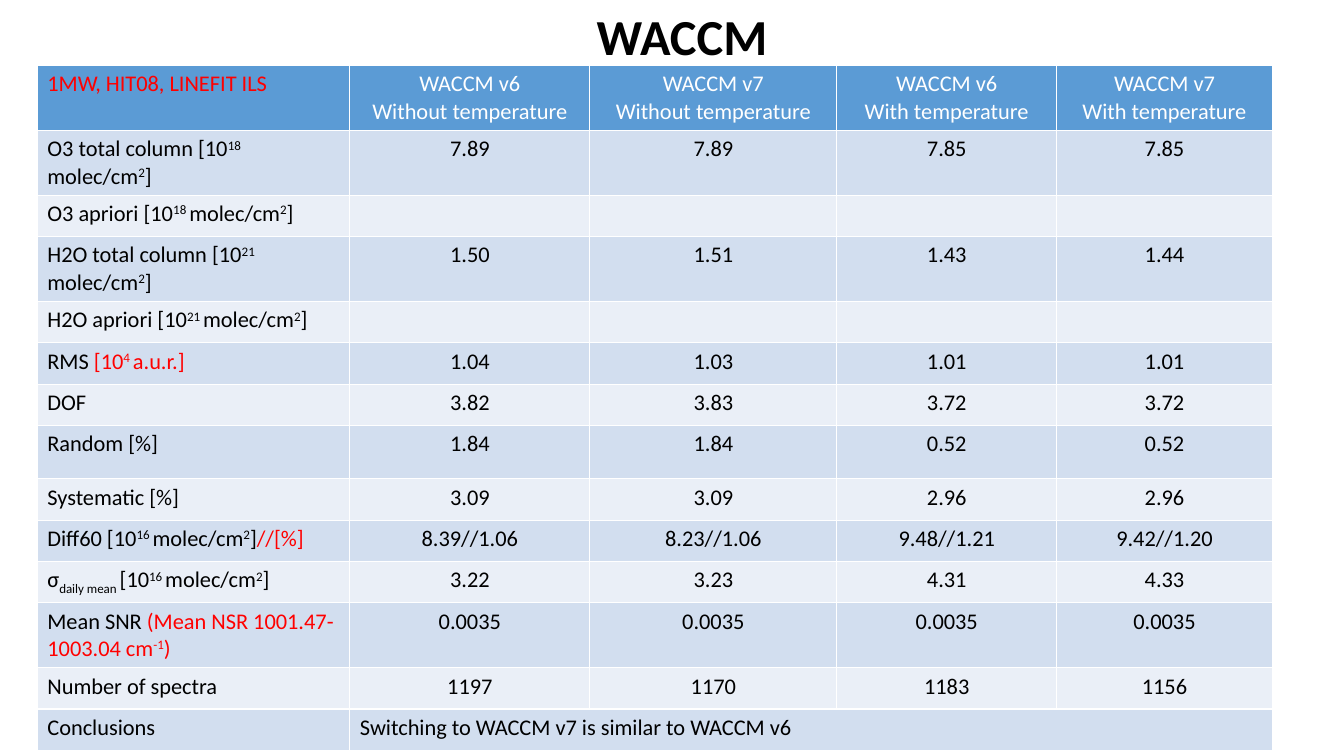
from pptx import Presentation
from pptx.dml.color import RGBColor
from pptx.enum.text import MSO_ANCHOR, PP_ALIGN
from pptx.util import Inches, Pt

LEFT, CENTER = PP_ALIGN.LEFT, PP_ALIGN.CENTER
TOP = MSO_ANCHOR.TOP
TITLE_ONLY = 5

COLORS = {"header": "5B9BD5", "band": "D2DEEF", "light": "EAEFF7",
          "text": "000000", "white": "FFFFFF", "red": "FF0000"}
BASELINES = {"^": "30000", "_": "-25000"}

COL_WIDTHS = [3.1, 2.38, 2.45, 2.18, 2.14]
HEADER_HEIGHT, ROW_HEIGHT, RANDOM_HEIGHT = 0.37, 0.41, 0.53

# Labels: | parts runs, ! marks red, ^ superscript, _ subscript
HEADER = ["!1MW, HIT08, LINEFIT ILS"] + [
    f"WACCM {version}\n{mode} temperature"
    for mode in ("Without", "With") for version in ("v6", "v7")]
UNIT = "molec/cm|^2|]"
ROWS = [
    [f"O3 total column [10|^18 |{UNIT}", "7.89", "7.89", "7.85", "7.85"],
    [f"O3 apriori [10|^18 |{UNIT}", "", "", "", ""],
    [f"H2O total column [10|^21 |{UNIT}", "1.50", "1.51", "1.43", "1.44"],
    [f"H2O apriori [10|^21 |{UNIT}", "", "", "", ""],
    ["RMS |![10|!^4 |!a.u.r.]", "1.04", "1.03", "1.01", "1.01"],
    ["DOF", "3.82", "3.83", "3.72", "3.72"],
    ["Random [%]", "1.84", "1.84", "0.52", "0.52"],
    ["Systematic [%]", "3.09", "3.09", "2.96", "2.96"],
    [f"Diff60 [10|^16 |{UNIT}|!//[%]",
     "8.39//1.06", "8.23//1.06", "9.48//1.21", "9.42//1.20"],
    [f"σ|_daily mean |[10|^16 |{UNIT}", "3.22", "3.23", "4.31", "4.33"],
    ["Mean SNR |!(Mean NSR 1001.47-1003.04 cm|!^-1|!)"] + ["0.0035"] * 4,
    ["Number of spectra", "1197", "1170", "1183", "1156"],
    ["Conclusions", "Switching to WACCM v7 is similar to WACCM v6"],
]


class SlideBuilder:
    def __init__(self, slide, font="Calibri"):
        self.s = slide
        self.font = font

    def run(self, p, text, size, color, bold=False):
        r = p.add_run()
        r.text = text
        style = {"name": self.font, "size": Pt(size), "bold": bold}
        for name, value in style.items():
            setattr(r.font, name, value)
        r.font.color.rgb = RGBColor.from_string(COLORS[color])
        return r

    def rich_text(self, tf, text, color, align):
        """Write lines whose runs carry the !, ^ and _ marks."""
        for i, line in enumerate(text.split("\n")):
            p = tf.add_paragraph() if i else tf.paragraphs[0]
            p.alignment = align
            for part in line.split("|"):
                run_color = "red" if part.startswith("!") else color
                part = part.removeprefix("!")
                baseline = BASELINES.get(part[:1])
                r = self.run(p, part[1:] if baseline else part, 16, run_color)
                if baseline:
                    r._r.get_or_add_rPr().set("baseline", baseline)

    def title(self, text, left, top, width, height, indent):
        sp = self.s.shapes.title
        box = {"left": left, "top": top, "width": width, "height": height}
        for name, value in box.items():
            setattr(sp, name, Inches(value))
        tf = sp.text_frame
        tf.word_wrap = True
        tf.vertical_anchor = TOP
        p = tf.paragraphs[0]
        p.alignment = CENTER
        p.line_spacing = 1.0
        p._p.get_or_add_pPr().set("marL", str(Inches(indent)))
        self.run(p, text, 36, "text", bold=True)

    def cell(self, cell, text, fill, color, align):
        cell.fill.solid()
        cell.fill.fore_color.rgb = RGBColor.from_string(COLORS[fill])
        if text:
            self.rich_text(cell.text_frame, text, color, align)

    def table(self, rows, left, top, col_widths, row_heights):
        table = self.s.shapes.add_table(
            len(rows), len(col_widths), Inches(left), Inches(top),
            Inches(sum(col_widths)), Inches(sum(row_heights))).table
        for column, width in zip(table.columns, col_widths):
            column.width = Inches(width)
        for row, height in zip(table.rows, row_heights):
            row.height = Inches(height)
        for i, row in enumerate(rows):
            fill = "header" if i == 0 else "band" if i % 2 else "light"
            color = "text" if i else "white"
            spans = len(row) < len(col_widths)
            if spans:
                table.cell(i, 1).merge(table.cell(i, len(col_widths) - 1))
            for j, text in enumerate(row):
                align = LEFT if j == 0 or spans else CENTER
                self.cell(table.cell(i, j), text, fill, color, align)


def main():
    prs = Presentation()
    prs.slide_width, prs.slide_height = Inches(13.33), Inches(7.5)
    slide = prs.slides.add_slide(prs.slide_layouts[TITLE_ONLY])
    builder = SlideBuilder(slide)
    builder.title("WACCM", 2.5, 0, 6.51, 0.71, indent=2.02)
    heights = [HEADER_HEIGHT] + [
        RANDOM_HEIGHT if row[0].startswith("Random") else ROW_HEIGHT
        for row in ROWS]
    builder.table([HEADER] + ROWS, 0.37, 0.65, COL_WIDTHS, heights)
    prs.save("out.pptx")


if __name__ == "__main__":
    main()
